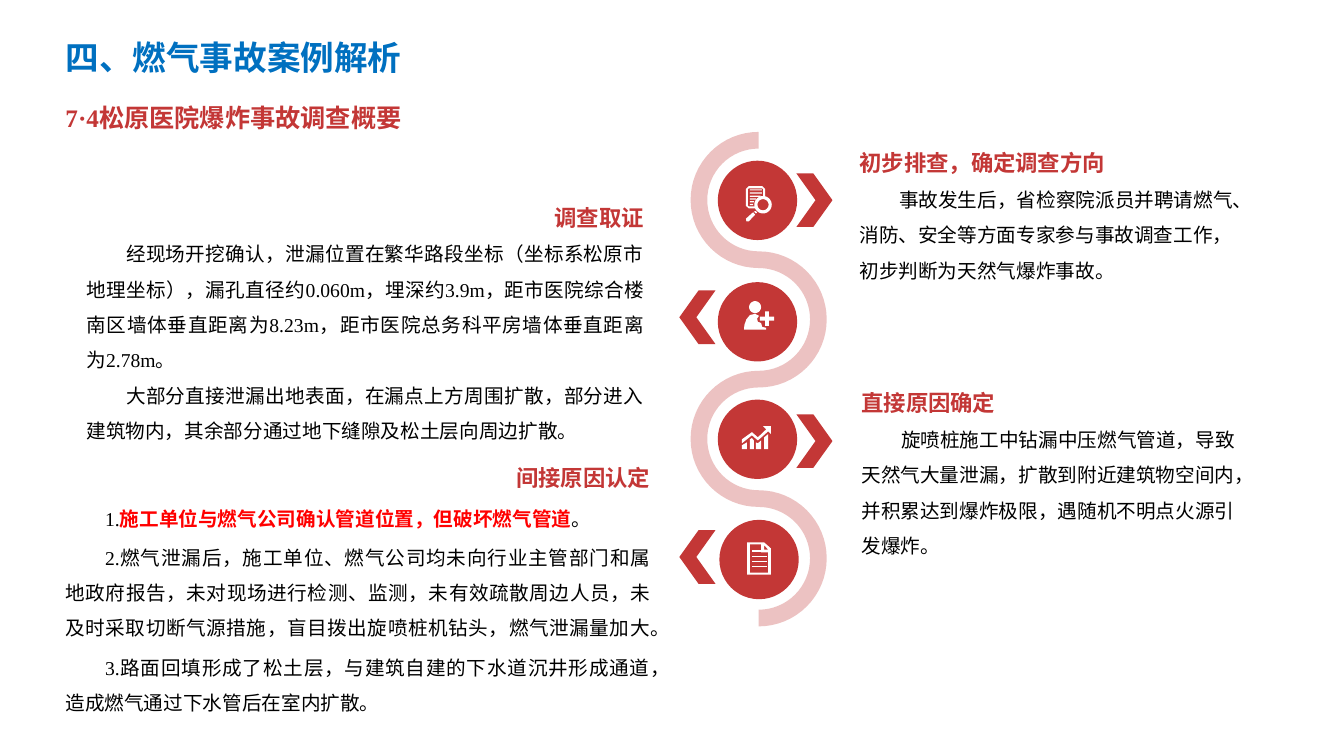
from math import cos, sin, pi
from lxml.etree import SubElement
from pptx import Presentation
from pptx.dml.color import RGBColor
from pptx.enum.shapes import MSO_SHAPE as Kind
from pptx.enum.text import MSO_AUTO_SIZE as Auto, PP_ALIGN as Align
from pptx.oxml.ns import qn
from pptx.util import Cm, Pt

COLOR = {"red": "C33736", "hot": "FF0000", "blue": "0070C0",
         "black": "000000", "white": "FFFFFF"}
SERIF, SANS = "Times New Roman", "Noto Sans CJK SC"

# Headings: text, box (left, top, width, height), size, font, colour
HEADS = [
    ("四、燃气事故案例解析", (1.4, 0.81, 25.63, 1.27), 24, SANS, "blue"),
    ("7·4松原医院爆炸事故调查概要", (1.4, 2.46, 12.14, 1.02), 18, SERIF, "red"),
]

# Text blocks: box, title side, body side, space before, title, paragraphs
BLOCKS = [
    ((21.41, 3.3, 10.34, 3.99), Align.LEFT, Align.LEFT, 0, "初步排查，确定调查方向", [
        "事故发生后，省检察院派员并聘请燃气、消防、安全等方面专家参与事故调查工作，初步判断为天然气爆炸事故。"]),
    ((1.93, 4.67, 14.55, 6.68), Align.RIGHT, Align.JUSTIFY, 0, "调查取证", [
        "经现场开挖确认，泄漏位置在繁华路段坐标（坐标系松原市地理坐标），漏孔直径约0.060m，埋深约3.9m，"
        "距市医院综合楼南区墙体垂直距离为8.23m，距市医院总务科平房墙体垂直距离为2.78m。",
        "大部分直接泄漏出地表面，在漏点上方周围扩散，部分进入建筑物内，其余部分通过地下缝隙及松土层向周边扩散。"]),
    ((1.4, 11.23, 15.24, 7.04), Align.RIGHT, Align.JUSTIFY, 2.8, "间接原因认定", [
        ("1.", "施工单位与燃气公司确认管道位置，但破坏燃气管道", "。"),
        "2.燃气泄漏后，施工单位、燃气公司均未向行业主管部门和属地政府报告，未对现场进行检测、监测，"
        "未有效疏散周边人员，未及时采取切断气源措施，盲目拨出旋喷桩机钻头，燃气泄漏量加大。",
        "3.路面回填形成了松土层，与建筑自建的下水道沉井形成通道，造成燃气通过下水管后在室内扩散。"]),
    ((21.46, 9.35, 10.31, 4.88), Align.LEFT, Align.LEFT, 0, "直接原因确定", [
        "旋喷桩施工中钻漏中压燃气管道，导致天然气大量泄漏，扩散到附近建筑物空间内，"
        "并积累达到爆炸极限，遇随机不明点火源引发爆炸。"]),
]


def arc(x, y, r, start=0, end=2 * pi, n=32):
    return [(x + r * cos(start + (end - start) * i / n),
             y + r * sin(start + (end - start) * i / n)) for i in range(n + 1)]


def bar(x, y, w, h):
    return [(x, y), (x + w, y), (x + w, y + h), (x, y + h)]


def plus(x, y, r, t):
    ends = [(r, -t), (r, t), (t, t)]
    pts = []
    for _ in range(4):
        pts += [(x + a, y + b) for a, b in ends]
        ends = [(-b, a) for a, b in ends]
    return pts


# Icons: each is a list of shapes, each shape a list of outlines in cm from the disc centre
SEARCH = [
    [bar(-0.19, y, w, 0.03) for y, w in
     zip((-0.28, -0.2, -0.12, -0.05, 0.02, 0.09), (0.3, 0.3, 0.27, 0.15, 0.1, 0.08))],
    [arc(0.14, 0.11, 0.22), arc(0.14, 0.11, 0.14, 2 * pi, 0)],
    [[(-0.29, 0.46), (-0.28, 0.53), (-0.22, 0.53), (-0.06, 0.36), (-0.11, 0.3)],
     [(-0.09, 0.28), (-0.04, 0.33), (-0.01, 0.31), (-0.04, 0.27)]],
    [[(-0.04, 0.2), (-0.22, 0.2), (-0.29, 0.14), (-0.29, -0.29), (-0.22, -0.36),
      (0.12, -0.36), (0.19, -0.29), (0.19, -0.08), (0.14, -0.08), (0.14, -0.28),
      (0.12, -0.3), (-0.22, -0.3), (-0.24, -0.28), (-0.24, 0.13), (-0.22, 0.15),
      (-0.06, 0.15)]],
]
PERSON = [
    [plus(0.24, -0.08, 0.18, 0.05)],
    [arc(-0.06, -0.37, 0.15),
     [(-0.34, 0.2), (-0.33, 0.08), (-0.28, -0.06), (-0.19, -0.17), (-0.06, -0.2),
      (0.04, -0.15), (-0.01, -0.08), (0.01, 0), (0.09, 0.03), (0.12, 0.13),
      (0.22, 0.15), (0.22, 0.2)]],
]
CHART = [
    [[(-0.39, 0.25), (-0.39, 0.15), (-0.27, 0.08), (-0.27, 0.25)],
     [(-0.19, 0.25), (-0.19, 0), (-0.14, -0.03), (-0.09, 0.03), (-0.09, 0.25)],
     [(-0.04, 0.25), (-0.04, 0.08), (0.01, 0.1), (0.09, 0.03), (0.09, 0.25)],
     [(0.17, 0.25), (0.17, -0.05), (0.27, -0.13), (0.27, 0.25)]],
    [[(0.34, -0.33), (0.14, -0.33), (0.22, -0.25), (0.01, -0.05), (-0.14, -0.18),
      (-0.39, 0), (-0.39, 0.1), (-0.14, -0.1), (0.01, 0.03), (0.27, -0.2), (0.34, -0.13)]],
]
PAGE = [
    [[(0.3, -0.28), (0.13, -0.43), (-0.3, -0.43), (-0.3, 0.38), (0.3, 0.38)],
     [(0.23, -0.25), (0.13, -0.25), (0.13, -0.36)],
     [(0.23, 0.33), (-0.23, 0.33), (-0.23, -0.38), (0.05, -0.38), (0.05, -0.18),
      (0.23, -0.18)]],
] + [[bar(-0.18, -0.23 + 0.13 * i, 0.38, 0.03)] for i in range(4)]

# Steps: disc centre, chevron left and top, chevron turn, icon
STEPS = [
    (19.09, 5.05, 20.07, 4.37, 0, SEARCH),
    (19.09, 8.11, 17.12, 7.32, 180, PERSON),
    (19.09, 11.07, 20.07, 10.44, 0, CHART),
    (19.13, 14.1, 17.12, 13.36, 180, PAGE),
]
BAND_X, BAND_Y, PITCH, HALF = 19.12, 5.04, 3.01, 0.21

deck = Presentation()
deck.slide_width, deck.slide_height = Cm(33.87), Cm(19.05)
slide = deck.slides.add_slide(deck.slide_layouts[6])


def tint(color):
    return RGBColor.from_string(COLOR[color])


def paint(shape, color):
    shape.shadow.inherit = False
    shape.fill.solid()
    shape.fill.fore_color.rgb = tint(color)
    shape.line.fill.background()
    return shape


def trace(home, loops, color, x=0, y=0):
    loops = [[(Cm(x + a), Cm(y + b)) for a, b in loop] for loop in loops]
    pen = home.build_freeform(*loops[0][0])
    for i, loop in enumerate(loops):
        if i:
            pen.move_to(*loop[0])
        pen.add_line_segments(loop[1:], close=True)
    return paint(pen.convert_to_shape(), color)


def style(para, size, font, color, bold):
    face = para.font
    face.size, face.name, face.bold = Pt(size), font, bold
    face.color.rgb = tint(color)
    ea = SubElement(face._element, qn("a:ea"))
    ea.set("typeface", SANS)


def frame(box):
    text = slide.shapes.add_textbox(*map(Cm, box)).text_frame
    text.word_wrap = True
    text.auto_size = Auto.SHAPE_TO_FIT_TEXT
    return text


# Winding band: down one edge, back up the other
down, back = [], []
for i in range(4):
    side = -1 if i % 2 == 0 else 1
    for edge, gap in ((down, -side * HALF), (back, side * HALF)):
        edge += arc(BAND_X, BAND_Y + i * PITCH, PITCH / 2 + gap,
                    -pi / 2, -pi / 2 + side * pi)
band = trace(slide.shapes, [down + back[::-1]], "red")
shade = band.fill._xPr.find(".//" + qn("a:srgbClr"))
SubElement(shade, qn("a:alpha")).set("val", "30000")

# Discs with chevrons and icons
for x, y, left, top, turn, icon in STEPS:
    group = slide.shapes.add_group_shape().shapes
    paint(group.add_shape(Kind.OVAL, Cm(x - 1), Cm(y - 1), Cm(2), Cm(2)), "red")
    mark = paint(group.add_shape(Kind.CHEVRON, Cm(left), Cm(top), Cm(0.91), Cm(1.35)), "red")
    mark.adjustments[0] = 0.53
    mark.rotation = turn
    for loops in icon:
        trace(group, loops, "white", x, y)

# Headings
for words, box, size, font, color in HEADS:
    para = frame(box).paragraphs[0]
    para.text = words
    style(para, size, font, color, True)

# Text blocks
for box, side, flow, before, title, body in BLOCKS:
    text = frame(box)
    head = text.paragraphs[0]
    head.text, head.alignment, head.line_spacing = title, side, 1.5
    style(head, 16, SERIF, "red", True)
    for item in body:
        para = text.add_paragraph()
        para.alignment, para.line_spacing = flow, 1.5
        para.space_before = Pt(before)
        props = para._p.get_or_add_pPr()
        props.set("marL", "0")
        props.set("indent", str(Cm(1)))
        style(para, 14, SERIF, "black", False)
        for i, part in enumerate([item] if isinstance(item, str) else item):
            run = para.add_run()
            run.text = part
            if i == 1:
                run.font.bold = True
                run.font.color.rgb = tint("hot")

deck.save("out.pptx")
